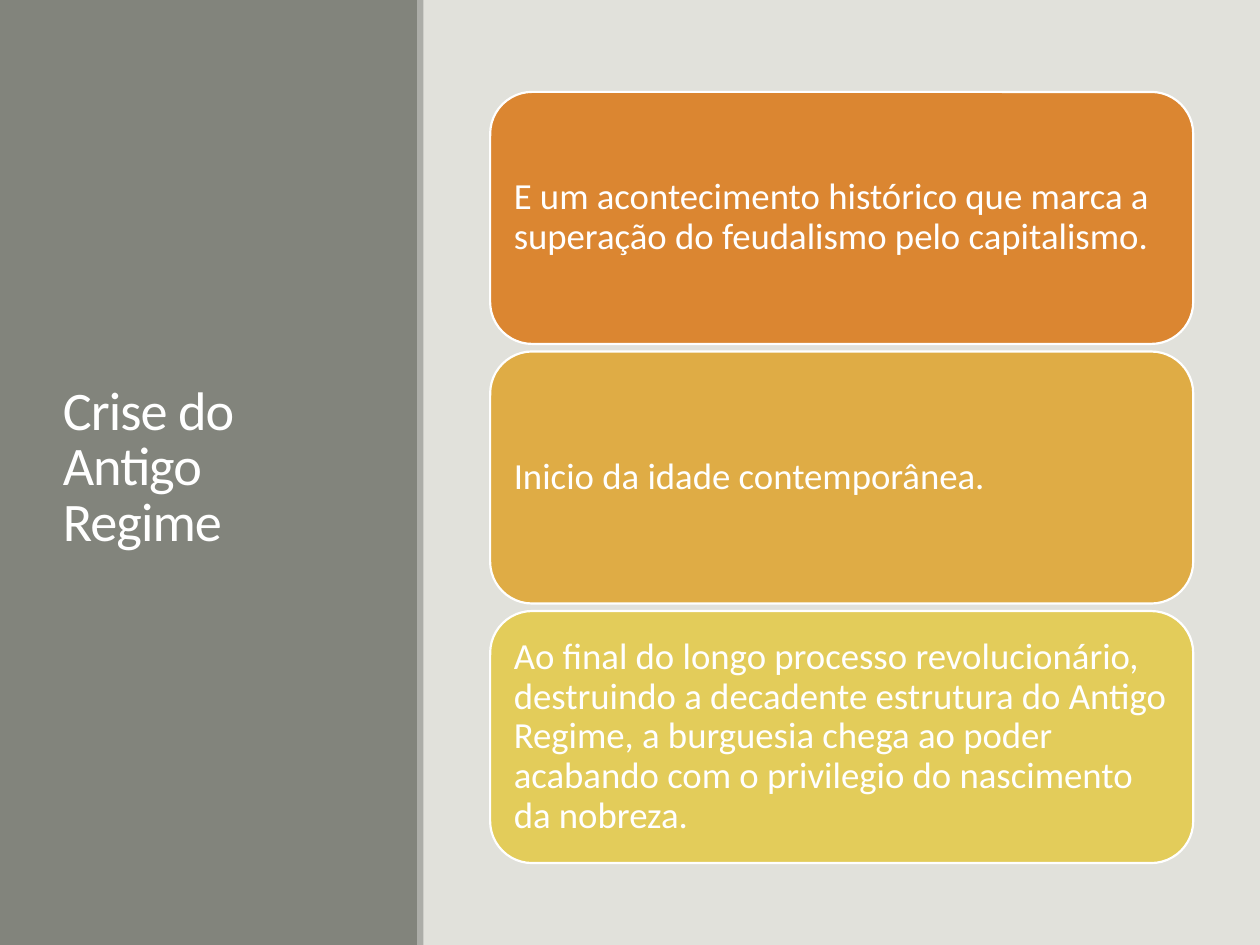
from typing import NamedTuple

from pptx import Presentation
from pptx.dml.color import RGBColor
from pptx.enum.shapes import MSO_SHAPE
from pptx.enum.text import MSO_ANCHOR, PP_ALIGN
from pptx.util import Inches, Pt

RECT = MSO_SHAPE.RECTANGLE
ROUNDED = MSO_SHAPE.ROUNDED_RECTANGLE
MIDDLE = MSO_ANCHOR.MIDDLE
LEFT = PP_ALIGN.LEFT

WIDTH, HEIGHT = 10, 7.5
FONT = "Calibri"
WHITE, PAPER, GREY, LIGHT_GREY = "FFFFFF", "E1E1DB", "82847C", "ACADA8"
CARD_LEFT, CARD_TOP, CARD_WIDTH, CARD_HEIGHT = 3.89, 0.73, 5.58, 2
CARD_PITCH = CARD_HEIGHT + 0.06


class Box(NamedTuple):
    left: float
    top: float
    width: float
    height: float


class Card(NamedTuple):
    text: str
    color: str


PANELS = [
    (Box(0, 0, WIDTH, HEIGHT), PAPER),
    (Box(0, 0, 3.32, HEIGHT), GREY),
    (Box(3.31, 0, 0.05, HEIGHT), LIGHT_GREY),
]
TITLE_BOX = Box(0.4, 0.57, 2.53, 6.31)
CARDS = [
    Card("E um acontecimento histórico que marca a superação do feudalismo "
         "pelo capitalismo.", "DB8631"),
    Card("Inicio da idade contemporânea.", "DFAC45"),
    Card("Ao final do longo processo revolucionário, destruindo a decadente "
         "estrutura do Antigo Regime, a burguesia chega ao poder acabando com "
         "o privilegio do nascimento da nobreza.", "E3CC5A"),
]


def rgb(color: str) -> RGBColor:
    return RGBColor.from_string(color)


def emu(box: Box) -> list[int]:
    return [Inches(v) for v in box]


def add_panel(s, box: Box, color: str, shape=RECT):
    sp = s.shapes.add_shape(shape, *emu(box))
    sp.shadow.inherit = False
    sp.fill.solid()
    sp.fill.fore_color.rgb = rgb(color)
    sp.line.fill.background()
    return sp


def write(sp, text: str, size: float, spacing: float, inset: float):
    tf = sp.text_frame
    tf.word_wrap = True
    tf.vertical_anchor = MIDDLE
    tf.margin_left = tf.margin_right = Inches(inset)
    tf.margin_top = tf.margin_bottom = Inches(inset)
    p = tf.paragraphs[0]
    p.alignment = LEFT
    p.line_spacing = spacing
    r = p.add_run()
    r.text = text
    r.font.name = FONT
    r.font.size = Pt(size)
    r.font.color.rgb = rgb(WHITE)
    return r


def add_title(s, text: str) -> None:
    sp = s.shapes.add_textbox(*emu(TITLE_BOX))
    r = write(sp, text, 31, 0.85, 0.1)
    r.font._element.set("spc", "-50")


def add_card(s, row: int, card: Card) -> None:
    box = Box(CARD_LEFT, CARD_TOP + row * CARD_PITCH, CARD_WIDTH, CARD_HEIGHT)
    sp = add_panel(s, box, card.color, ROUNDED)
    sp.line.color.rgb = rgb(WHITE)
    sp.line.width = Pt(1.25)
    write(sp, card.text, 21, 0.9, 0.09)


def main() -> None:
    prs = Presentation()
    prs.slide_width, prs.slide_height = Inches(WIDTH), Inches(HEIGHT)
    s = prs.slides.add_slide(prs.slide_layouts[6])
    s.background.fill.solid()
    s.background.fill.fore_color.rgb = rgb(PAPER)
    for box, color in PANELS:
        add_panel(s, box, color)
    add_title(s, "Crise do Antigo Regime")
    for row, card in enumerate(CARDS):
        add_card(s, row, card)
    prs.save("out.pptx")


if __name__ == "__main__":
    main()
